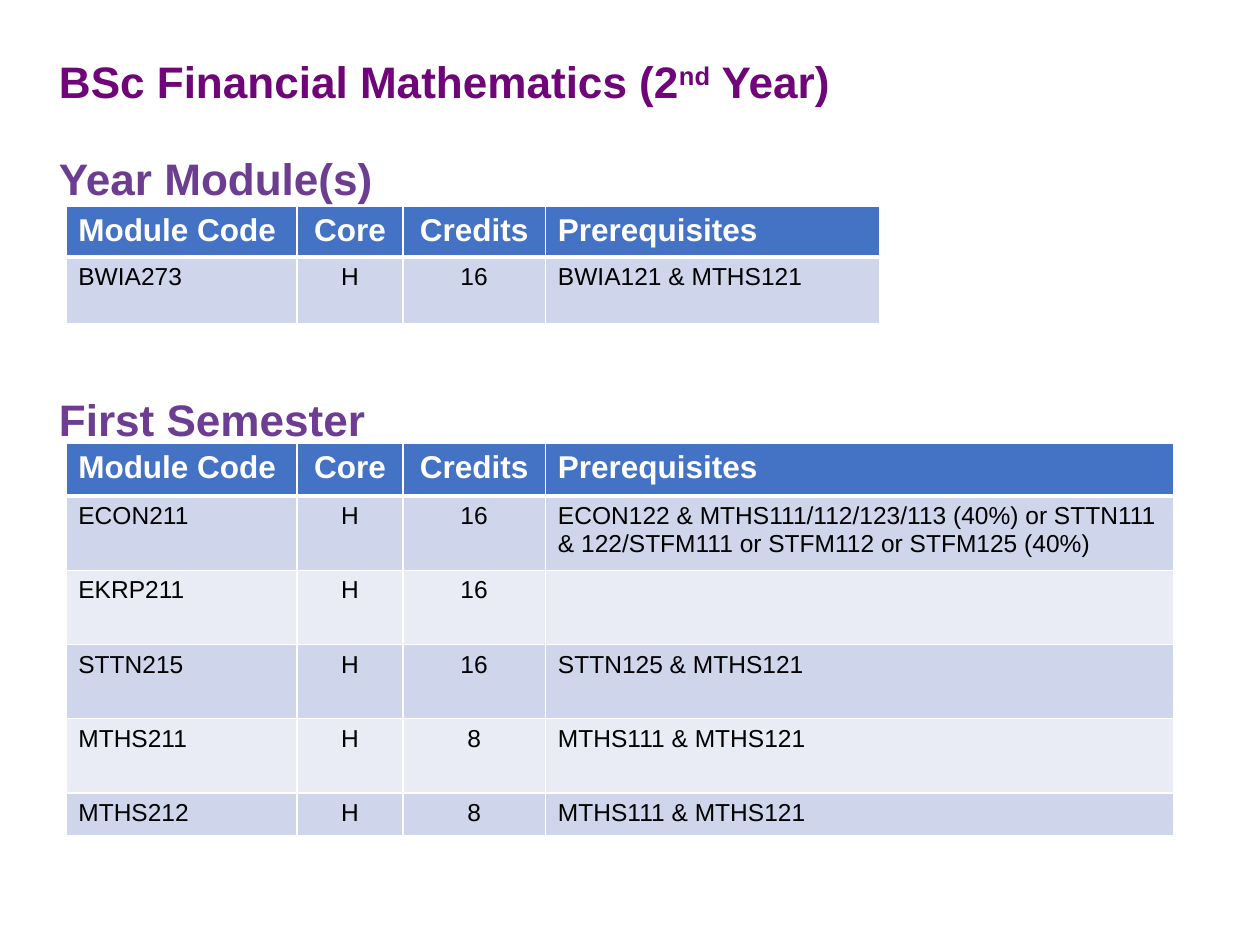
from dataclasses import dataclass

from pptx import Presentation
from pptx.dml.color import RGBColor
from pptx.enum.text import PP_ALIGN
from pptx.oxml import parse_xml
from pptx.oxml.ns import nsdecls
from pptx.util import Pt


@dataclass(frozen=True)
class Theme:
    font: str = "Arial"
    title: str = "6F0579"
    heading: str = "6C3D91"
    header_fill: str = "4472C4"
    header_text: str = "FFFFFF"
    body_text: str = "000000"
    bands: tuple = ("CFD5EA", "E9EBF5")
    border: str = "FFFFFF"
    title_size: float = 25.2
    header_size: float = 18
    body_size: float = 14
    thin: float = 1
    thick: float = 3


THEME = Theme()

# Content: heading lines as (runs, colour, space before); a run is (text, raised)
HEADINGS = [
    ([("BSc Financial Mathematics (2", False), ("nd", True), (" Year)", False)],
     THEME.title, 0),
    ([("Year Module(s)", False)], THEME.heading, 28),
    ([("First Semester", False)], THEME.heading, 110.5),
]
HEADER = ("Module Code", "Core", "Credits", "Prerequisites")
YEAR_MODULES = [("BWIA273", "H", "16", "BWIA121 & MTHS121")]
FIRST_SEMESTER = [
    ("ECON211", "H", "16",
     "ECON122 & MTHS111/112/123/113 (40%) or STTN111 & 122/STFM111 or STFM112 or STFM125 (40%)"),
    ("EKRP211", "H", "16", ""),
    ("STTN215", "H", "16", "STTN125 & MTHS121"),
    ("MTHS211", "H", "8", "MTHS111 & MTHS121"),
    ("MTHS212", "H", "8", "MTHS111 & MTHS121"),
]

# Layout in points
TABLE_LEFT = 37.6
SHARED_WIDTHS = [132.2, 60.5, 81.4]
CENTRED_COLUMNS = (1, 2)
TABLES = [  # top, last column width, row heights, modules
    (118, 190.8, [28, 38], YEAR_MODULES),
    (253.5, 359.3, [30] + [42.4] * 4 + [24.6], FIRST_SEMESTER),
]


def style(font, size, colour, bold):
    font.name, font.size, font.bold = THEME.font, Pt(size), bold
    font.color.rgb = RGBColor.from_string(colour)


def add_headings(page):
    box = page.shapes.add_textbox(Pt(26.6), Pt(31), Pt(666), Pt(225))
    frame = box.text_frame
    frame.word_wrap = True
    for index, (runs, colour, gap) in enumerate(HEADINGS):
        para = frame.add_paragraph() if index else frame.paragraphs[0]
        para.line_spacing = 0.9
        para.space_before = Pt(gap)
        style(para.font, THEME.title_size, colour, True)
        for text, raised in runs:
            span = para.add_run()
            span.text = text
            if raised:
                span.font._element.set("baseline", "30000")


def set_borders(cell, top, bottom):
    properties = cell._tc.get_or_add_tcPr()
    widths = {"lnL": THEME.thin, "lnR": THEME.thin, "lnT": top, "lnB": bottom}
    for position, (side, width) in enumerate(widths.items()):
        properties.insert(position, parse_xml(
            f'<a:{side} {nsdecls("a")} w="{Pt(width)}"><a:solidFill>'
            f'<a:srgbClr val="{THEME.border}"/></a:solidFill></a:{side}>'))


def fill_cell(cell, text, row, column):
    is_header = row == 0
    colour = THEME.header_fill if is_header else THEME.bands[(row - 1) % 2]
    cell.fill.solid()
    cell.fill.fore_color.rgb = RGBColor.from_string(colour)
    set_borders(cell, THEME.thick if row == 1 else THEME.thin,
                THEME.thick if is_header else THEME.thin)
    cell.text = text
    para = cell.text_frame.paragraphs[0]
    para.alignment = PP_ALIGN.CENTER if column in CENTRED_COLUMNS else PP_ALIGN.LEFT
    if is_header:
        style(para.font, THEME.header_size, THEME.header_text, True)
    else:
        style(para.font, THEME.body_size, THEME.body_text, False)


def add_module_table(page, top, last_width, heights, modules):
    widths = SHARED_WIDTHS + [last_width]
    rows = [HEADER] + modules
    table = page.shapes.add_table(len(rows), len(widths), Pt(TABLE_LEFT), Pt(top),
                                  Pt(sum(widths)), Pt(sum(heights))).table
    for column, width in zip(table.columns, widths):
        column.width = Pt(width)
    for row, (values, height) in enumerate(zip(rows, heights)):
        table.rows[row].height = Pt(height)
        for column, text in enumerate(values):
            fill_cell(table.cell(row, column), text, row, column)


def main():
    deck = Presentation()
    deck.slide_width, deck.slide_height = Pt(720), Pt(540)
    page = deck.slides.add_slide(deck.slide_layouts[6])
    add_headings(page)
    for table in TABLES:
        add_module_table(page, *table)
    deck.save("out.pptx")


if __name__ == "__main__":
    main()
